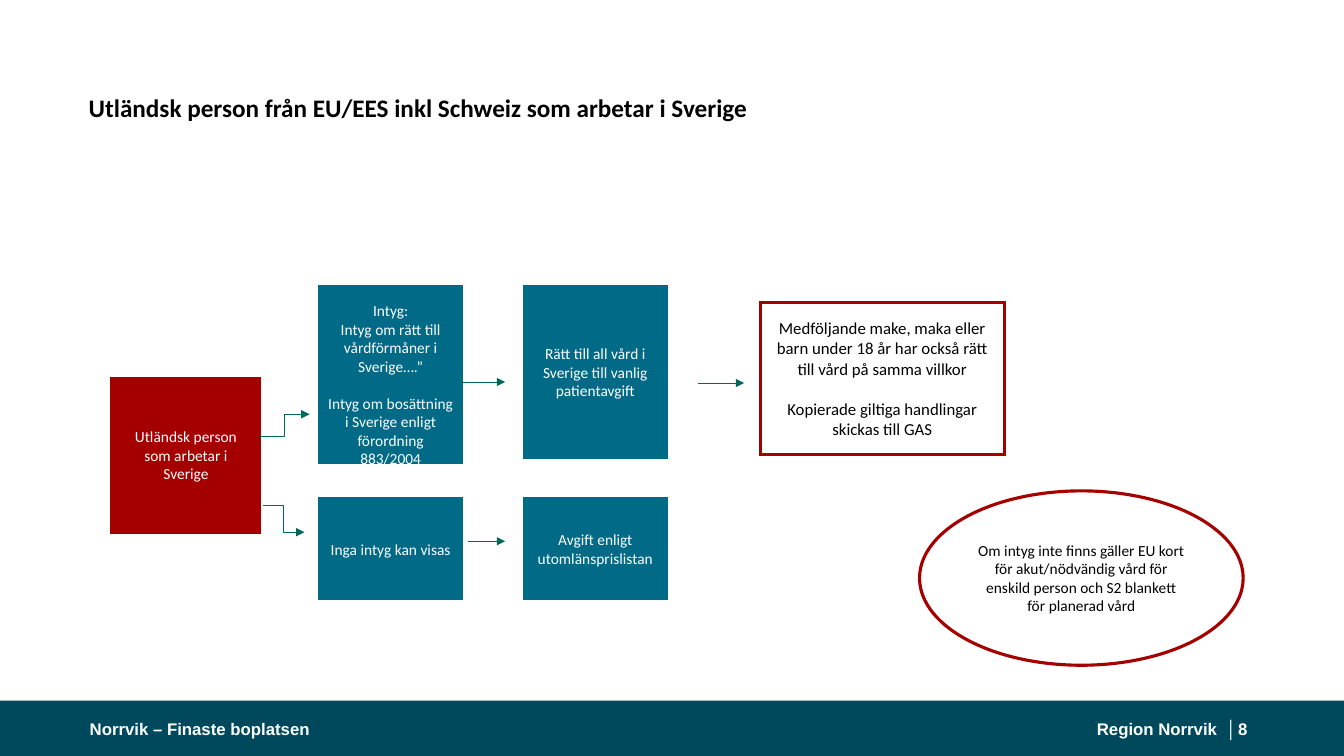
import pptx
import pptx.dml.color
import pptx.enum.shapes
import pptx.enum.text
import pptx.util
from lxml import etree
from pptx.oxml.ns import qn

Inches = pptx.util.Inches
Pt = pptx.util.Pt
SHAPE = pptx.enum.shapes.MSO_SHAPE
CONNECTOR = pptx.enum.shapes.MSO_CONNECTOR
ALIGN = pptx.enum.text.PP_ALIGN

COLORS = {
    "footer": "00495D",
    "teal": "006A87",
    "red": "A40000",
    "arrow": "006858",
    "white": "FFFFFF",
    "black": "000000",
}


def rgb(name):
    return pptx.dml.color.RGBColor.from_string(COLORS[name])


def write_text(frame, paragraphs, size, color, align, font="Calibri", bold=False, gap=0):
    """Fill a text frame; gap is the space in points before the last of several paragraphs."""
    frame.word_wrap = True
    frame.vertical_anchor = pptx.enum.text.MSO_ANCHOR.MIDDLE
    for index, text in enumerate(paragraphs):
        paragraph = frame.add_paragraph() if index else frame.paragraphs[0]
        paragraph.text = text
        paragraph.alignment = align
        paragraph.font.name = font
        paragraph.font.size = Pt(size)
        paragraph.font.bold = bold
        paragraph.font.color.rgb = rgb(color)
    if gap:
        paragraph.space_before = Pt(gap)


def add_label(slide, box, text, size, color, font, align=ALIGN.LEFT):
    """Add a bold text box without margins."""
    frame = slide.shapes.add_textbox(*map(Inches, box)).text_frame
    frame.margin_left = frame.margin_right = frame.margin_top = frame.margin_bottom = 0
    write_text(frame, [text], size, color, align, font, bold=True)


def add_box(slide, kind, box, fill, line=None, line_width=2):
    shape = slide.shapes.add_shape(kind, *map(Inches, box))
    shape.shadow.inherit = False
    shape.fill.solid()
    shape.fill.fore_color.rgb = rgb(fill)
    if line:
        shape.line.color.rgb = rgb(line)
        shape.line.width = Pt(line_width)
        etree.SubElement(shape.line._get_or_add_ln(), qn("a:miter"), lim="800000")
    else:
        shape.line.fill.background()
    return shape


def add_step(slide, box, paragraphs, fill="teal", line="white", gap=0):
    shape = add_box(slide, SHAPE.RECTANGLE, box, fill, line)
    write_text(shape.text_frame, paragraphs, 11, "white", ALIGN.CENTER, gap=gap)
    return shape


def add_note(slide, kind, box, paragraphs, size, gap=0):
    shape = add_box(slide, kind, box, "white", "red", 2.25)
    write_text(shape.text_frame, paragraphs, size, "black", ALIGN.CENTER, gap=gap)


def add_arrow(slide, kind, start, end):
    connector = slide.shapes.add_connector(kind, *map(Inches, start + end))
    connector.line.color.rgb = rgb("arrow")
    connector.line.width = Pt(0.5)
    etree.SubElement(connector.line._get_or_add_ln(), qn("a:tailEnd"), type="triangle")
    etree.SubElement(connector._element.spPr, qn("a:effectLst"))


def add_footer(slide):
    add_box(slide, SHAPE.RECTANGLE, (0, 6.95, 13.33, 0.55), "footer")
    for left, width, text, align in (
        (0.89, 4.5, "Norrvik – Finaste boplatsen", ALIGN.LEFT),
        (10.7, 1.57, "Region Norrvik  │", ALIGN.RIGHT),
        (12.28, 0.24, "8", ALIGN.LEFT),
    ):
        add_label(slide, (left, 7.06, width, 0.35), text, 12, "white", "Arial", align)


def add_flow(slide):
    certificate_left, care_left, step_width = 3.14, 5.17, 1.47
    upper_top, lower_top, lower_height = 2.81, 4.92, 1.05

    add_step(slide, (1.11, 3.75, step_width, 1.53),
             ["Utländsk person som arbetar i Sverige"], "red", "red")
    certificates = add_step(
        slide, (certificate_left, upper_top, step_width, 1.81),
        ["Intyg:", "Intyg om rätt till vårdförmåner i Sverige….”",
         "Intyg om bosättning i Sverige enligt förordning 883/2004"], gap=13.2)
    certificates.text_frame.margin_top = Inches(0.2)
    certificates.text_frame.margin_bottom = 0
    add_step(slide, (care_left, upper_top, step_width, 1.76),
             ["Rätt till all vård i Sverige till vanlig patientavgift"])
    for left, text in ((certificate_left, "Inga intyg kan visas"),
                       (care_left, "Avgift enligt utomlänsprislistan")):
        add_step(slide, (left, lower_top, step_width, lower_height), [text])

    for kind, start, end in (
        (CONNECTOR.STRAIGHT, (4.64, 5.37), (5.01, 5.37)),
        (CONNECTOR.STRAIGHT, (4.56, 3.79), (5.01, 3.79)),
        (CONNECTOR.ELBOW, (2.61, 5.01), (3.02, 5.28)),
        (CONNECTOR.ELBOW, (2.58, 4.33), (3.07, 4.11)),
        (CONNECTOR.STRAIGHT, (6.92, 3.8), (7.38, 3.8)),
    ):
        add_arrow(slide, kind, start, end)


def add_notes_beside_flow(slide):
    add_note(slide, SHAPE.RECTANGLE, (7.54, 3, 2.42, 1.51),
             ["Medföljande make, maka eller barn under 18 år har också rätt "
              "till vård på samma villkor",
              "Kopierade giltiga handlingar skickas till GAS"], 12, gap=14.4)
    add_note(slide, SHAPE.OVAL, (9.12, 4.87, 3.21, 1.73),
             ["Om intyg inte finns gäller EU kort för akut/nödvändig vård för "
              "enskild person och S2 blankett för planerad vård"], 11)


def main():
    presentation = pptx.Presentation()
    presentation.slide_width = Inches(13.33)
    presentation.slide_height = Inches(7.5)
    slide = presentation.slides.add_slide(presentation.slide_layouts[6])
    add_footer(slide)
    add_label(slide, (0.88, 0.36, 11.58, 1.42),
              "Utländsk person från EU/EES inkl Schweiz som arbetar i Sverige",
              18, "black", "Calibri")
    add_flow(slide)
    add_notes_beside_flow(slide)
    presentation.save("out.pptx")


if __name__ == "__main__":
    main()
